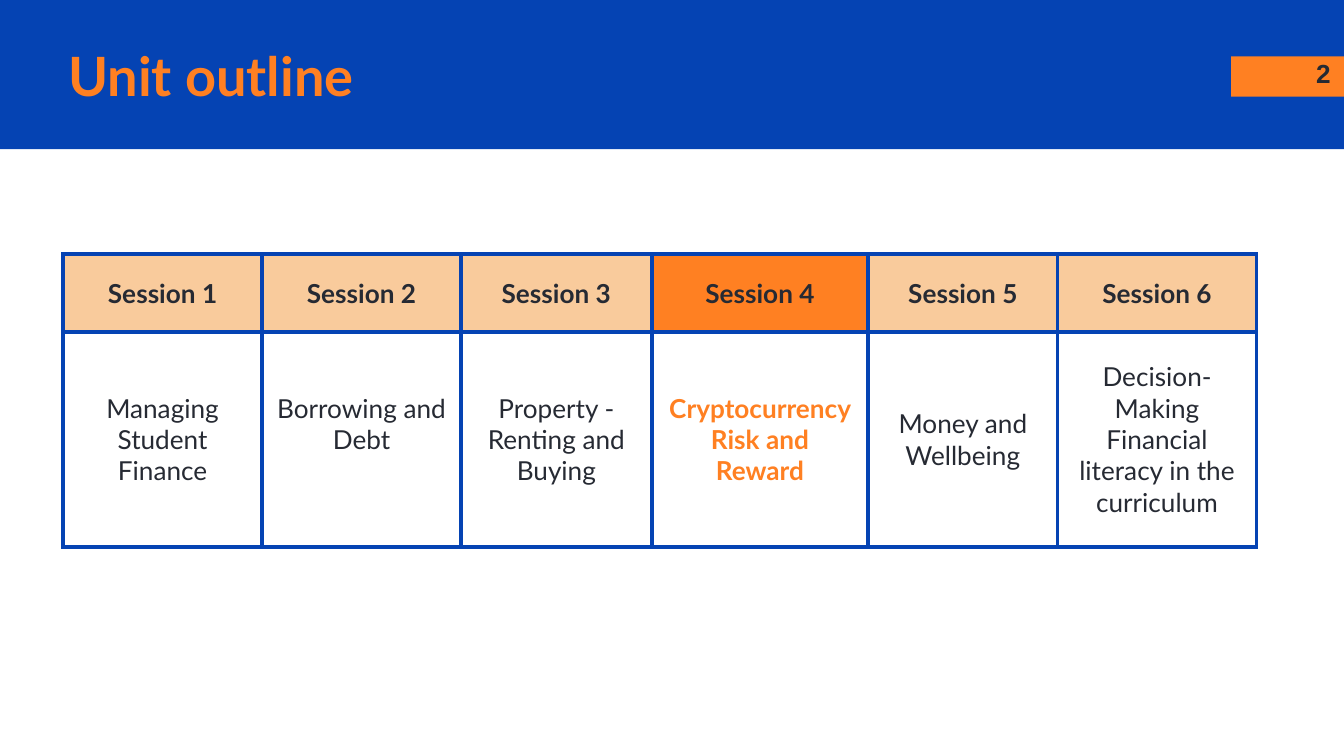
from dataclasses import dataclass

from lxml.etree import SubElement
from pptx import Presentation
from pptx.dml.color import RGBColor
from pptx.enum.shapes import MSO_SHAPE
from pptx.enum.text import MSO_ANCHOR, PP_ALIGN
from pptx.oxml.ns import qn
from pptx.util import Inches, Pt


@dataclass(frozen=True)
class Theme:
    """Colours, fonts and type sizes of the deck."""
    blue: str = "0543B3"
    orange: str = "FF8022"
    peach: str = "F9CB9C"
    ink: str = "262A33"
    white: str = "FFFFFF"
    font: str = "Lato"
    number_font: str = "Arial"
    title_size: float = 29
    body_size: float = 14
    border: float = 2.25
    inset: float = 0.1


THEME = Theme()
PAGE_WIDTH = 10
PAGE_HEIGHT = PAGE_WIDTH * 9 / 16
CURRENT_SESSION = 4
SESSIONS = [
    (1.48, "Managing Student Finance"),
    (1.48, "Borrowing and Debt"),
    (1.42, "Property - Renting and Buying"),
    (1.61, "Cryptocurrency Risk and Reward"),
    (1.41, "Money and Wellbeing"),
    (1.48, "Decision- Making\nFinancial literacy in the curriculum"),
]
ROW_HEIGHTS = [0.58, 1.6]
RAISED_TOPIC = 2
RAISED_INSET = 0.33


def write_text(holder, text, color, size=THEME.body_size, font=THEME.font,
               bold=True, align=PP_ALIGN.LEFT):
    """Fill a text frame and format every run."""
    holder.text = text
    for para in holder.paragraphs:
        para.alignment = align
        for span in para.runs:
            span.font.name = font
            span.font.size = Pt(size)
            span.font.bold = bold
            span.font.color.rgb = RGBColor.from_string(color)


def set_insets(holder, inset=THEME.inset):
    """Give a text frame or table cell equal margins."""
    holder.margin_left = holder.margin_right = Inches(inset)
    holder.margin_top = holder.margin_bottom = Inches(inset)


def add_bar(page, left, top, width, height, color):
    """Add a plain filled rectangle."""
    bar = page.shapes.add_shape(MSO_SHAPE.RECTANGLE, Inches(left), Inches(top),
                                Inches(width), Inches(height))
    bar.shadow.inherit = False
    bar.fill.solid()
    bar.fill.fore_color.rgb = RGBColor.from_string(color)
    bar.line.fill.background()


def add_label(page, left, top, width, height, text, color, anchor, **style):
    """Add a wrapped text box."""
    box = page.shapes.add_textbox(Inches(left), Inches(top), Inches(width), Inches(height))
    frame = box.text_frame
    frame.word_wrap = True
    frame.vertical_anchor = anchor
    set_insets(frame)
    write_text(frame, text, color, **style)


def add_header(page, left, top, width, height, title, number):
    """Place the title band with its page number tab."""
    add_bar(page, left, top, width, height, THEME.blue)
    right = left + width
    add_bar(page, right - 0.84, top + 0.42, 0.84, 0.3, THEME.orange)
    add_label(page, right - 0.6, top + 0.33, 0.6, 0.43, number, THEME.ink,
              MSO_ANCHOR.TOP, font=THEME.number_font, align=PP_ALIGN.RIGHT)
    add_label(page, left + 0.41, top + 0.28, 8.46, 0.56, title, THEME.orange,
              MSO_ANCHOR.MIDDLE, size=THEME.title_size)


def style_cell(cell, text, fill, color, bold):
    """Set the borders, fill and centred text of a table cell."""
    properties = cell._tc.get_or_add_tcPr()
    for side in ("a:lnL", "a:lnR", "a:lnT", "a:lnB"):
        line = SubElement(properties, qn(side), w=str(Pt(THEME.border)))
        solid = SubElement(line, qn("a:solidFill"))
        SubElement(solid, qn("a:srgbClr"), val=THEME.blue)
    cell.fill.solid()
    cell.fill.fore_color.rgb = RGBColor.from_string(fill)
    cell.vertical_anchor = MSO_ANCHOR.MIDDLE
    set_insets(cell)
    write_text(cell.text_frame, text, color, bold=bold, align=PP_ALIGN.CENTER)


def add_outline(page, left, top):
    """Place the table of sessions and highlight the current one."""
    width = sum(column for column, topic in SESSIONS)
    table = page.shapes.add_table(len(ROW_HEIGHTS), len(SESSIONS), Inches(left), Inches(top),
                                  Inches(width), Inches(sum(ROW_HEIGHTS))).table
    for row, height in zip(table.rows, ROW_HEIGHTS):
        row.height = Inches(height)
    for index, (column, topic) in enumerate(SESSIONS):
        table.columns[index].width = Inches(column)
        current = index + 1 == CURRENT_SESSION
        style_cell(table.cell(0, index), f"Session {index + 1}",
                   THEME.orange if current else THEME.peach, THEME.ink, True)
        style_cell(table.cell(1, index), topic, THEME.white,
                   THEME.orange if current else THEME.ink, current)
    table.cell(1, RAISED_TOPIC - 1).margin_bottom = Inches(RAISED_INSET)


def main():
    """Build and save the unit outline slide."""
    deck = Presentation()
    deck.slide_width = Inches(PAGE_WIDTH)
    deck.slide_height = Inches(PAGE_HEIGHT)
    page = deck.slides.add_slide(deck.slide_layouts[6])
    add_header(page, 0, 0, PAGE_WIDTH, 1.11, "Unit outline", "2")
    add_outline(page, 0.47, 1.89)
    deck.save("out.pptx")


if __name__ == "__main__":
    main()
